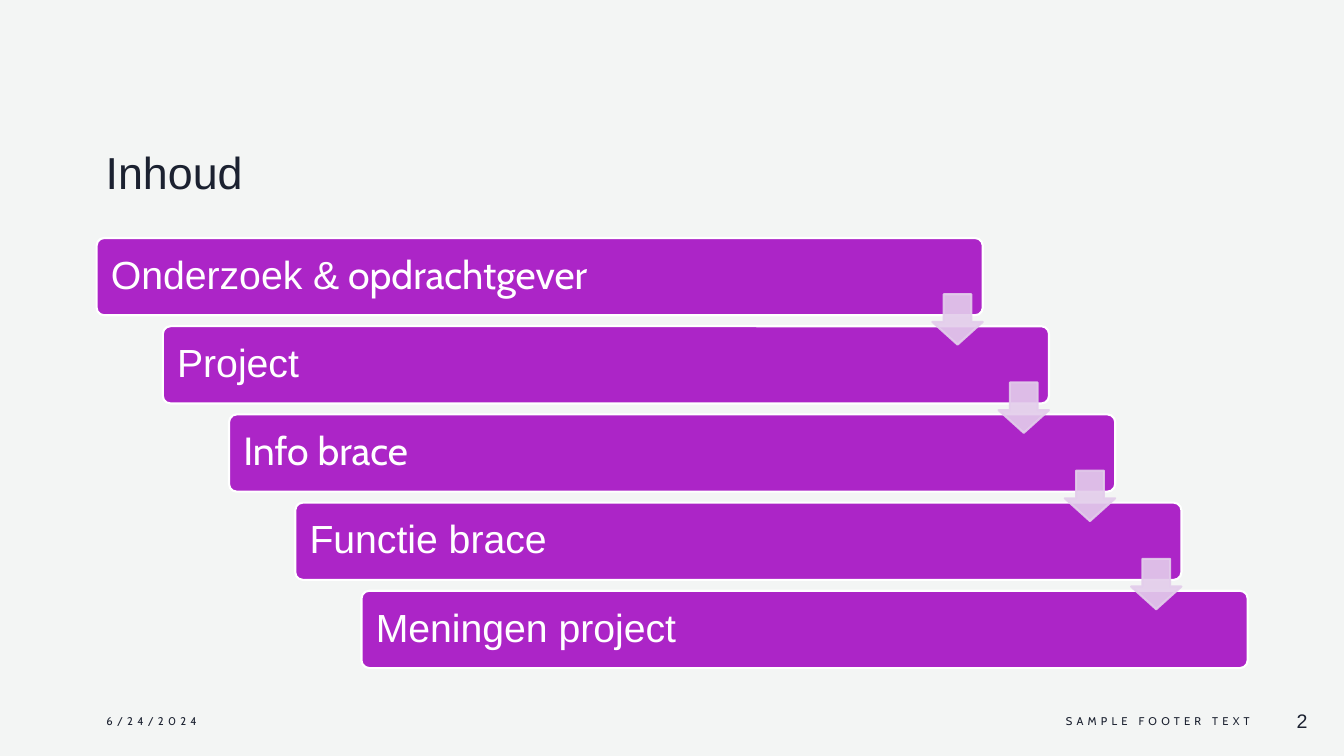
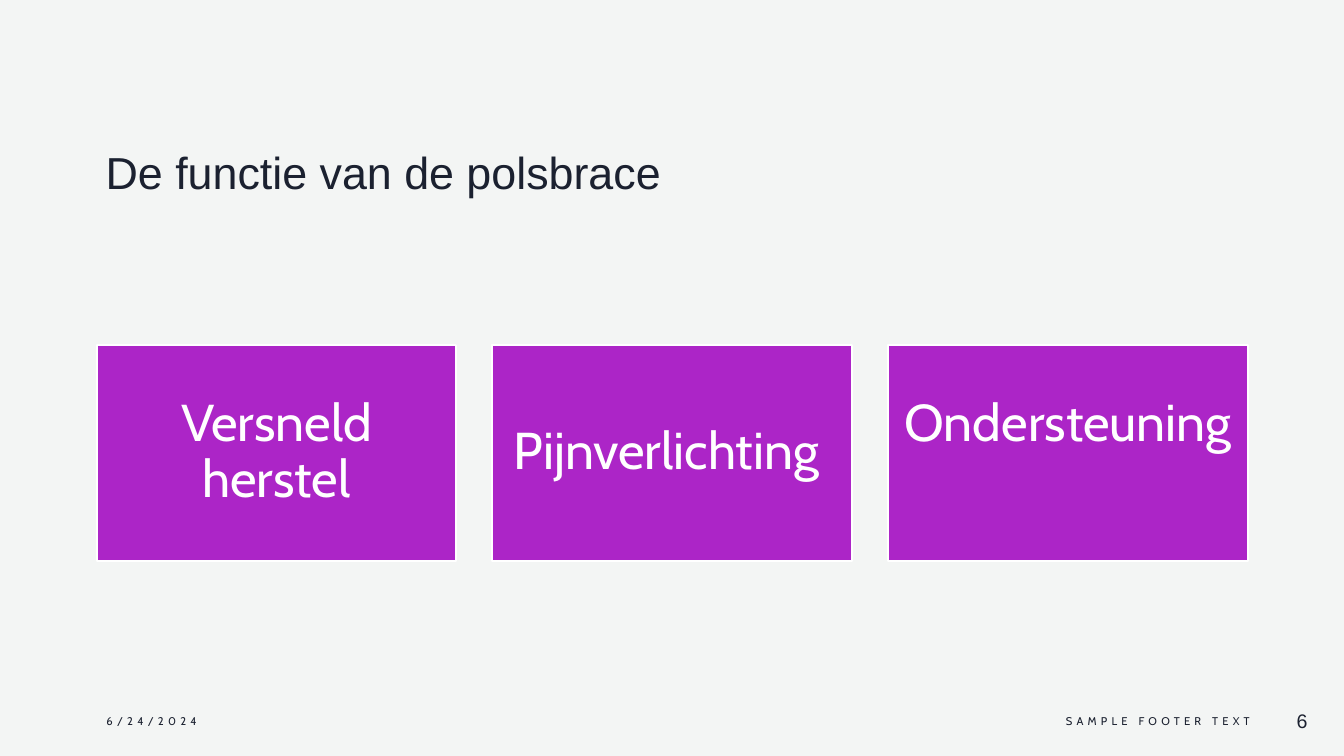
from lxml.etree import SubElement
from pptx import Presentation
from pptx.dml.color import RGBColor
from pptx.enum.shapes import MSO_SHAPE
from pptx.enum.text import MSO_ANCHOR, PP_ALIGN
from pptx.oxml.ns import qn
from pptx.util import Pt

COLORS = {
    "background": "F3F5F4",
    "ink": "1B2130",
    "accent": "AC25C7",
    "arrow": "E3CDEB",
    "white": "FFFFFF",
}
HEADING, BODY = "Arial", "Cabin"
MARGIN = 69


def color(name):
    return RGBColor.from_string(COLORS[name])


def apply(target, formats):
    for attribute, value in formats.items():
        setattr(target, attribute, value)


class Deck:
    def __init__(self):
        self.presentation = Presentation()
        apply(self.presentation, {"slide_width": Pt(960), "slide_height": Pt(540)})
        self.slide = None

    def new_slide(self, title, number):
        blank = self.presentation.slide_layouts[6]
        self.slide = self.presentation.slides.add_slide(blank)
        fill = self.slide.background.fill
        fill.solid()
        fill.fore_color.rgb = color("background")
        self.label((68.4, 46, 823, 99.5), title, HEADING, 32, anchor=MSO_ANCHOR.BOTTOM)
        self.label((MARGIN, 500.4, 216, 28.8), "6/24/2024", BODY, 8, spacing=3)
        self.label((561.6, 500.4, 338.4, 28.8), "SAMPLE FOOTER TEXT", BODY, 8,
                   align=PP_ALIGN.RIGHT, spacing=3)
        self.label((900, 500.4, 41, 28.8), number, HEADING, 14, align=PP_ALIGN.RIGHT)

    def add_runs(self, frame, runs, size, ink, align, spacing=0):
        paragraph = frame.paragraphs[0]
        paragraph.alignment = align
        for text, font in runs:
            run = paragraph.add_run()
            run.text = text
            apply(run.font, {"name": font, "size": Pt(size)})
            run.font.color.rgb = color(ink)
            if spacing:
                run.font._element.set("spc", str(spacing * 100))
        return paragraph

    def label(self, box, text, font, size, align=PP_ALIGN.LEFT,
              anchor=MSO_ANCHOR.MIDDLE, spacing=0):
        frame = self.slide.shapes.add_textbox(*map(Pt, box)).text_frame
        apply(frame, {"word_wrap": True, "vertical_anchor": anchor})
        self.add_runs(frame, [(text, font)], size, "ink", align, spacing)

    def block(self, preset, box, fill, line, adjustments=()):
        block = self.slide.shapes.add_shape(preset, *map(Pt, box))
        block.shadow.inherit = False
        block.fill.solid()
        block.fill.fore_color.rgb = color(fill)
        block.line.color.rgb = color(line)
        block.line.width = Pt(1.5)
        for index, value in enumerate(adjustments):
            block.adjustments[index] = value
        return block

    def panel(self, preset, box, runs, size, inset, align, adjustments=(), lift=0):
        frame = self.block(preset, box, "accent", "white", adjustments).text_frame
        apply(frame, {
            "word_wrap": True,
            "vertical_anchor": MSO_ANCHOR.MIDDLE,
            "margin_left": Pt(inset),
            "margin_right": Pt(inset),
            "margin_top": Pt(inset),
            "margin_bottom": Pt(inset + lift),
        })
        self.add_runs(frame, runs, size, "white", align).line_spacing = 0.9

    def step_arrow(self, left, top):
        arrow = self.block(MSO_SHAPE.DOWN_ARROW, (left, top, 36, 36),
                           "arrow", "arrow", (0.55, 0.45))
        for tint in arrow._element.spPr.iter(qn("a:srgbClr")):
            SubElement(tint, qn("a:alpha"), val="90000")


def contents(deck):
    deck.new_slide("Inhoud", "2")
    chapters = [
        [("Onderzoek &", HEADING), (" opdrachtgever", BODY)],
        [("Project", HEADING)],
        [("Info brace", BODY)],
        [("Functie brace", HEADING)],
        [("Meningen project", HEADING)],
    ]
    shift, drop = 47.3, 63
    for index, runs in enumerate(chapters):
        box = (MARGIN + index * shift, 170 + index * drop, 633, 55.2)
        deck.panel(MSO_SHAPE.ROUNDED_RECTANGLE, box, runs, 28, 8.6,
                   PP_ALIGN.LEFT, (0.1,))
    for index in range(len(chapters) - 1):
        deck.step_arrow(666 + index * shift, 210.2 + index * drop)


def functions(deck):
    deck.new_slide("De functie van de polsbrace", "6")
    benefits = [("Versneld herstel", 0), ("Pijnverlichting ", 0), ("Ondersteuning", 40)]
    width, gap = 257, 25.7
    for index, (benefit, lift) in enumerate(benefits):
        box = (MARGIN + index * (width + gap), 246.3, width, 154.2)
        deck.panel(MSO_SHAPE.RECTANGLE, box, [(benefit, BODY)], 37, 10.8,
                   PP_ALIGN.CENTER, lift=lift)


def main():
    deck = Deck()
    contents(deck)
    functions(deck)
    deck.presentation.save("out.pptx")


if __name__ == "__main__":
    main()
